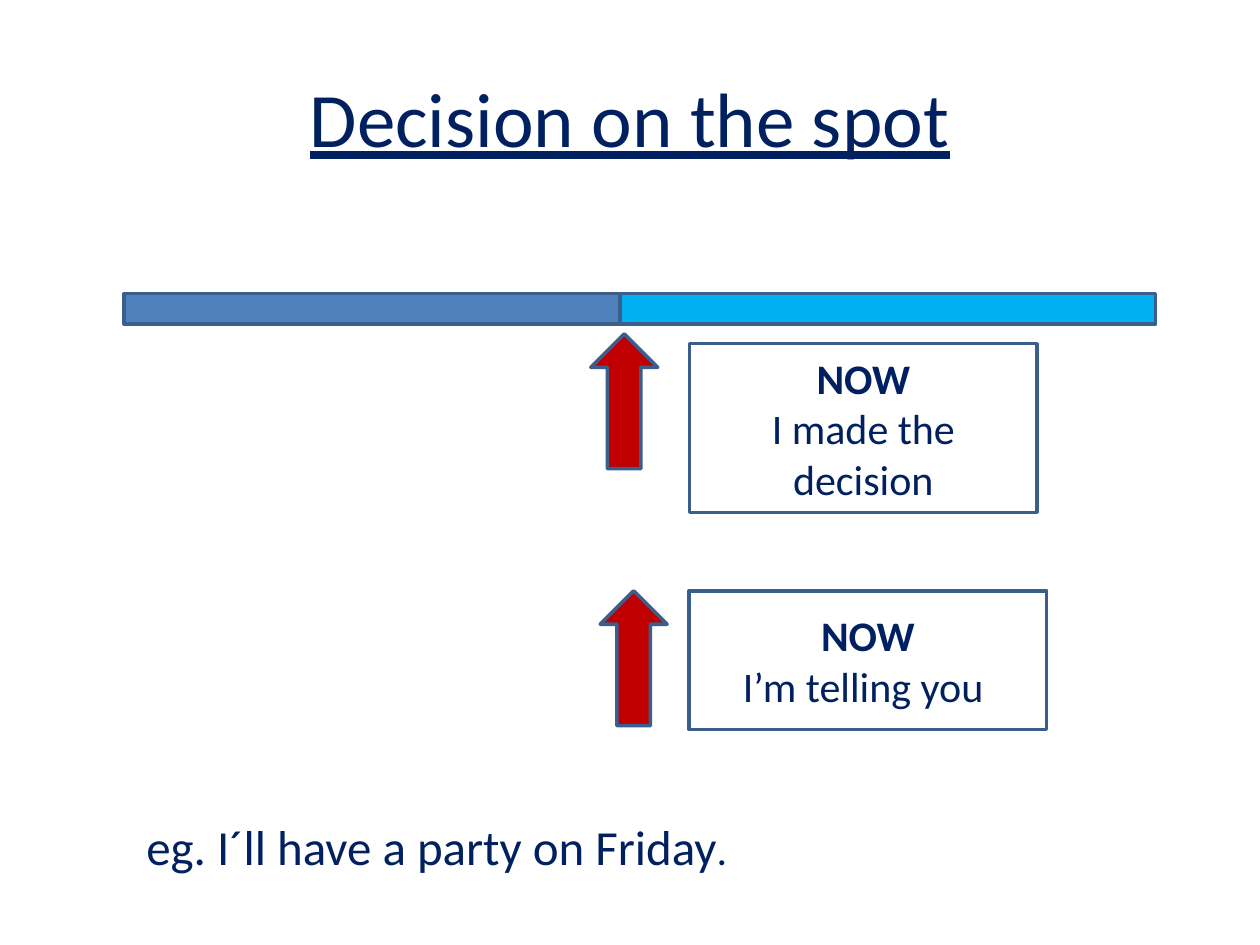
from pptx import Presentation
from pptx.dml.color import RGBColor
from pptx.enum.shapes import MSO_SHAPE
from pptx.enum.text import MSO_ANCHOR, PP_ALIGN
from pptx.util import Cm, Pt

RECTANGLE = MSO_SHAPE.RECTANGLE
UP_ARROW = MSO_SHAPE.UP_ARROW
MIDDLE = MSO_ANCHOR.MIDDLE
TOP = MSO_ANCHOR.TOP
CENTER = PP_ALIGN.CENTER
LEFT = PP_ALIGN.LEFT

FONT = "Calibri"
NAVY = "002060"
OUTLINE = "3A5F8C"
PAST = "4F81BD"
FUTURE = "00B0F0"
RED = "C00000"
WHITE = "FFFFFF"


def color(hex_code):
    """Return the colour for a hex string."""
    return RGBColor.from_string(hex_code)


def add_outlined(slide, preset, box, fill):
    """Add a filled preset shape with the common outline."""
    shape = slide.shapes.add_shape(preset, *map(Cm, box))
    shape.shadow.inherit = False
    shape.fill.solid()
    shape.fill.fore_color.rgb = color(fill)
    shape.line.color.rgb = color(OUTLINE)
    shape.line.width = Pt(2)
    return shape


def add_run(paragraph, wording, size, bold=False, underline=False):
    """Append one navy run to a paragraph."""
    run = paragraph.add_run()
    run.text = wording
    run.font.name = FONT
    run.font.size = Pt(size)
    run.font.bold = bold
    run.font.underline = underline
    run.font.color.rgb = color(NAVY)


def add_line_of_text(slide, box, anchor, alignment):
    """Add a wrapping text box and return its first paragraph."""
    frame = slide.shapes.add_textbox(*map(Cm, box)).text_frame
    frame.word_wrap = True
    frame.vertical_anchor = anchor
    paragraph = frame.paragraphs[0]
    paragraph.alignment = alignment
    return paragraph


def add_title(slide, box):
    """Add the underlined heading centred in its box."""
    heading = add_line_of_text(slide, box, MIDDLE, CENTER)
    add_run(heading, "Decision on the spot", 44, underline=True)


def add_timeline(slide, box, past_width):
    """Split the box into a past bar and a future bar."""
    left, top, width, height = box
    add_outlined(slide, RECTANGLE, (left, top, past_width, height), PAST)
    future = (left + past_width, top, width - past_width, height)
    add_outlined(slide, RECTANGLE, future, FUTURE)


def add_moment(slide, box, label_width, label_height, event):
    """Put an arrow at the top left of the box and a label at the bottom right."""
    left, top, width, height = box
    add_outlined(slide, UP_ARROW, (left, top, 1.35, 2.72), RED)
    label_box = (left + width - label_width, top + height - label_height,
                 label_width, label_height)
    label = add_outlined(slide, RECTANGLE, label_box, WHITE).text_frame
    label.word_wrap = True
    label.vertical_anchor = MIDDLE
    now = label.paragraphs[0]
    now.alignment = CENTER
    add_run(now, "NOW", 24, bold=True)
    happening = label.add_paragraph()
    happening.alignment = CENTER
    add_run(happening, event, 24)


def add_example(slide, box):
    """Add the example sentence at the foot of the slide."""
    example = add_line_of_text(slide, box, TOP, LEFT)
    add_run(example, "eg. I´ll have a party on Friday", 28)
    add_run(example, ".", 24)


def main():
    """Build and save the slide."""
    deck = Presentation()
    deck.slide_width = Cm(25.4)
    deck.slide_height = Cm(19.05)
    slide = deck.slides.add_slide(deck.slide_layouts[6])
    add_title(slide, (1.27, 0.76, 22.86, 3.18))
    add_timeline(slide, (2.5, 5.92, 20.8, 0.61), 10)
    add_moment(slide, (11.91, 6.73, 9, 3.6), 7.01, 3.4, "I made the decision")
    add_moment(slide, (12.1, 11.91, 9, 2.8), 7.21, 2.8, "I’m telling you ")
    add_example(slide, (2.7, 16.33, 20.8, 1.45))
    deck.save("out.pptx")


if __name__ == "__main__":
    main()
